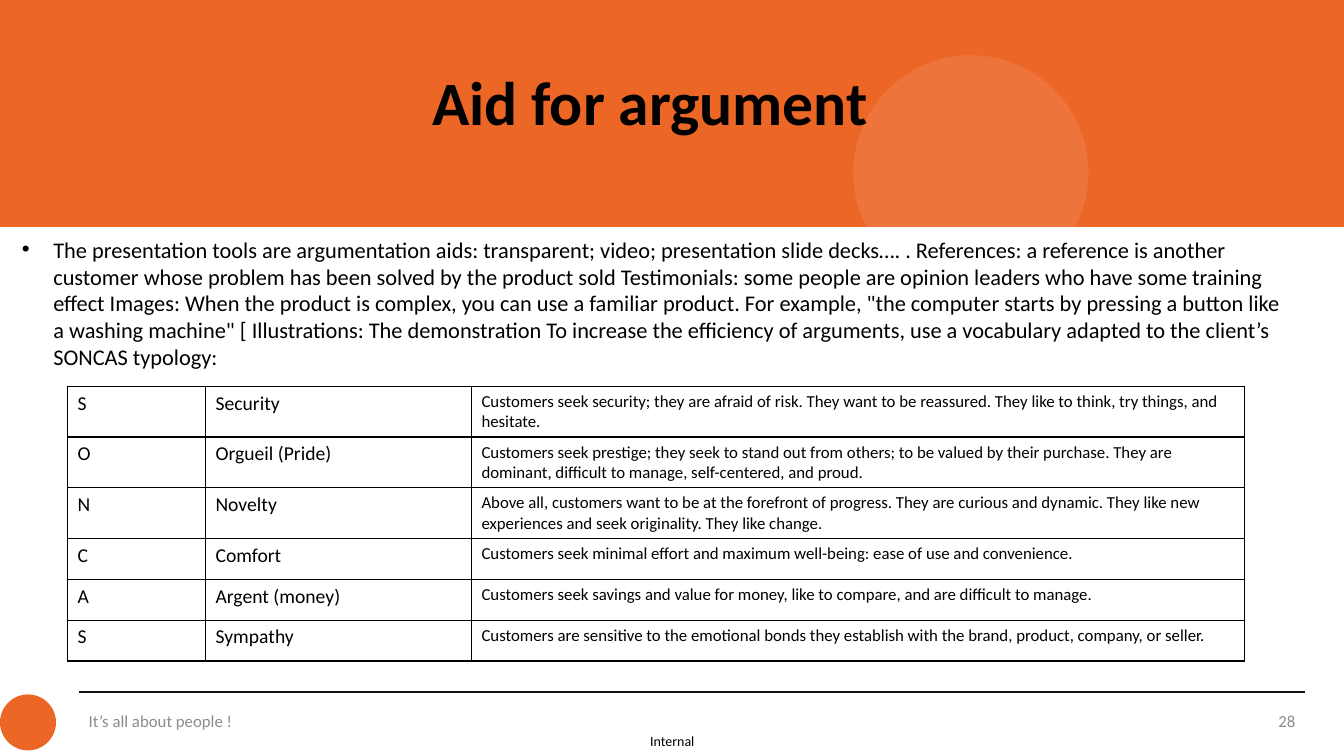
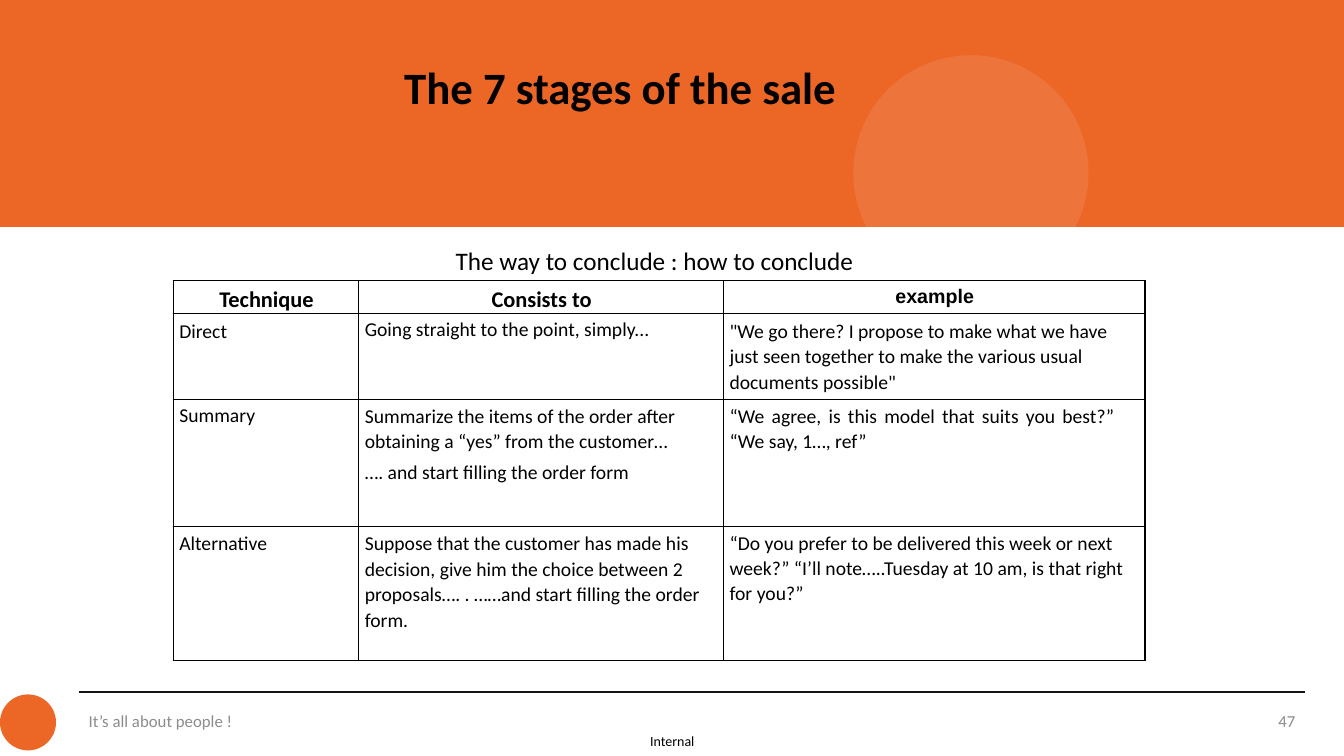
from lxml.etree import SubElement
from pptx import Presentation
from pptx.dml.color import RGBColor
from pptx.enum.shapes import MSO_CONNECTOR, MSO_SHAPE
from pptx.enum.text import MSO_ANCHOR as ANCHOR, PP_ALIGN as ALIGN
from pptx.oxml.ns import qn
from pptx.util import Pt

COLORS = {
    "orange": "EC6626",
    "white": "FFFFFF",
    "black": "000000",
    "rule": "121416",
    "grey": "8C8C8C",
}
FONT = "Calibri"

SONCAS = [
    ("S", "Security", "Customers seek security; they are afraid of risk. They want to be "
     "reassured. They like to think, try things, and hesitate."),
    ("O", "Orgueil (Pride)", "Customers seek prestige; they seek to stand out from others; to be "
     "valued by their purchase. They are dominant, difficult to manage, self-centered, and proud."),
    ("N", "Novelty", "Above all, customers want to be at the forefront of progress. They are "
     "curious and dynamic. They like new experiences and seek originality. They like change."),
    ("C", "Comfort", "Customers seek minimal effort and maximum well-being: ease of use and "
     "convenience."),
    ("A", "Argent (money)", "Customers seek savings and value for money, like to compare, and "
     "are difficult to manage."),
    ("S", "Sympathy", "Customers are sensitive to the emotional bonds they establish with the "
     "brand, product, company, or seller."),
]

AIDS = (
    "The presentation tools are argumentation aids: transparent; video; presentation slide "
    "decks…. . References: a reference is another customer whose problem has been solved by the "
    "product sold Testimonials: some people are opinion leaders who have some training effect "
    "Images: When the product is complex, you can use a familiar product. For example, \"the "
    "computer starts by pressing a button like a washing machine\" [ Illustrations: The "
    "demonstration To increase the efficiency of arguments, use a vocabulary adapted to the "
    "client’s SONCAS typology:"
)

HEADER = dict(size=16, bold=True, align=ALIGN.CENTER, spacing=1.07)
LOOSE = dict(size=14, spacing=1.07)
PLAIN = dict(size=14)
STEP = dict(size=14, spacing=1.05, after=4.1)
QUOTE = dict(size=14, spacing=1.05)

# Each cell is a text (one paragraph per line) with its paragraph style.
CLOSING = [
    [("Technique", HEADER), ("Consists to", HEADER),
     ("example", dict(HEADER, size=14, font="Arial"))],
    [("Direct", LOOSE), ("Going straight to the point, simply...", PLAIN),
     ("\"We go there? I propose to make what we have just seen together to make the various "
      "usual documents possible\"", dict(LOOSE, right=18))],
    [("Summary", PLAIN),
     ("Summarize the items of the order after obtaining a “yes” from the customer…\n"
      "…. and start filling the order form", STEP),
     ("“We agree, is this model that suits you best?” “We say, 1…, ref”",
      dict(QUOTE, align=ALIGN.JUSTIFY, right=18))],
    [("Alternative", LOOSE),
     ("Suppose that the customer has made his decision, give him the choice between 2 "
      "proposals…. . ……and start filling the order form.", LOOSE),
     ("“Do you prefer to be delivered this week or next week?” “I’ll note…..Tuesday at 10 am, "
      "is that right for you?”", QUOTE)],
]


def rgb(name):
    return RGBColor.from_string(COLORS[name])


class Deck:
    """Holds the shared style and the slide being filled."""

    def __init__(self):
        self.prs = Presentation()
        self.prs.slide_width, self.prs.slide_height = Pt(960), Pt(540)
        self.s = None

    def slide(self, title, box, size, number):
        self.s = self.prs.slides.add_slide(self.prs.slide_layouts[5])
        self.text("Internal", (453.6, 519, 53.3, 21), 10, align=ALIGN.CENTER,
                  anchor=ANCHOR.MIDDLE, inset=0)
        self.shape(MSO_SHAPE.OVAL, (0, 496, 40, 40), "orange")
        self.line(56.2, 494.5, 932.4, 494.5)
        self.shape(MSO_SHAPE.RECTANGLE, (0, 0, 960, 162), "orange")
        self.shape(MSO_SHAPE.OVAL, (609.5, 39.5, 168, 168), "white", alpha=10)
        footer = dict(size=12, color="grey", anchor=ANCHOR.MIDDLE)
        self.text("It’s all about people !", (56.2, 500.4, 652, 29), **footer)
        self.text(number, (888.4, 500.4, 44, 29), align=ALIGN.RIGHT, **footer)
        self.title(title, box, size)

    def title(self, text, box, size):
        """Fill the title placeholder and bring it in front of the band."""
        sp = self.s.shapes.title
        sp.left, sp.top, sp.width, sp.height = map(Pt, box)
        self.s.shapes._spTree.append(sp._element)
        tf = sp.text_frame
        tf.text = text
        tf.vertical_anchor = ANCHOR.MIDDLE
        self.style(tf, size, bold=True, align=ALIGN.CENTER)

    def shape(self, kind, box, color, alpha=None):
        sp = self.s.shapes.add_shape(kind, *map(Pt, box))
        sp.shadow.inherit = False
        sp.line.fill.background()
        sp.fill.solid()
        sp.fill.fore_color.rgb = rgb(color)
        if alpha is not None:
            clr = sp._element.spPr.find(".//" + qn("a:srgbClr"))
            SubElement(clr, qn("a:alpha"), val=str(alpha * 1000))

    def line(self, x1, y1, x2, y2):
        c = self.s.shapes.add_connector(MSO_CONNECTOR.STRAIGHT, *map(Pt, (x1, y1, x2, y2)))
        c.line.color.rgb = rgb("rule")
        c.line.width = Pt(1.5)
        SubElement(c._element.spPr, qn("a:effectLst"))

    def text(self, text, box, size, anchor=ANCHOR.TOP, inset=None, **style):
        tf = self.s.shapes.add_textbox(*map(Pt, box)).text_frame
        tf.word_wrap = True
        tf.vertical_anchor = anchor
        if inset is not None:
            tf.margin_left = tf.margin_top = tf.margin_right = tf.margin_bottom = Pt(inset)
        tf.text = text
        self.style(tf, size, **style)
        return tf

    def bullet(self, text, box, size):
        tf = self.text(text, box, size)
        for p in tf.paragraphs:
            pPr = p._p.get_or_add_pPr()
            pPr.set("marL", str(Pt(31)))
            pPr.set("indent", str(Pt(-22.5)))
            SubElement(pPr, qn("a:buFont"), typeface="Arial")
            SubElement(pPr, qn("a:buChar"), char="•")

    def style(self, tf, size, color="black", font=FONT, bold=False, align=ALIGN.LEFT,
              spacing=None, after=None, right=None):
        for p in tf.paragraphs:
            p.alignment = align
            if spacing:
                p.line_spacing = spacing
            if after:
                p.space_after = Pt(after)
            if right:
                p._p.get_or_add_pPr().set("marR", str(Pt(right)))
            for r in p.runs:
                r.font.name, r.font.size, r.font.bold = font, Pt(size), bold
                r.font.color.rgb = rgb(color)

    def table(self, left, top, widths, heights, rows, insets=None):
        """Draw rows of (text, style) cells; insets are left, top, right, bottom."""
        box = (left, top, sum(widths), sum(heights))
        t = self.s.shapes.add_table(len(rows), len(widths), *map(Pt, box)).table
        t.first_row = t.horz_banding = False
        for col, width in zip(t.columns, widths):
            col.width = Pt(width)
        for row, height, cells in zip(t.rows, heights, rows):
            row.height = Pt(height)
            for cell, (text, style) in zip(row.cells, cells):
                cell.text_frame.text = text
                self.style(cell.text_frame, **style)
                if insets:
                    (cell.margin_left, cell.margin_top,
                     cell.margin_right, cell.margin_bottom) = map(Pt, insets)
                self.border(cell)
                cell.fill.background()

    def border(self, cell):
        tcPr = cell._tc.get_or_add_tcPr()
        for side in ("lnL", "lnR", "lnT", "lnB"):
            ln = SubElement(tcPr, qn("a:" + side), w=str(Pt(1)))
            fill = SubElement(ln, qn("a:solidFill"))
            SubElement(fill, qn("a:srgbClr"), val=COLORS["black"])


def main():
    deck = Deck()

    deck.slide("Aid for argument", (81.4, 42, 766, 60.5), 44, "28")
    deck.bullet(AIDS, (0, 164.9, 932, 104), 16)
    sizes = (14, 14, 12)
    deck.table(48.2, 276, (98.6, 190, 552), [36.2] * 3 + [29.2] * 3,
               [[(text, dict(size=size)) for text, size in zip(row, sizes)] for row in SONCAS])

    deck.slide("The 7 stages of the sale", (201.6, 38.5, 483, 46), 32, "47")
    deck.table(123.8, 200.3, (132.5, 260.6, 301), (23.8, 61.2, 90.7, 95.8), CLOSING,
               insets=(4.3, 2.9, 3.6, 0))
    deck.text("The way to conclude : how to conclude", (226, 171.4, 483, 29), 18,
              align=ALIGN.CENTER)

    deck.prs.save("out.pptx")


if __name__ == "__main__":
    main()
